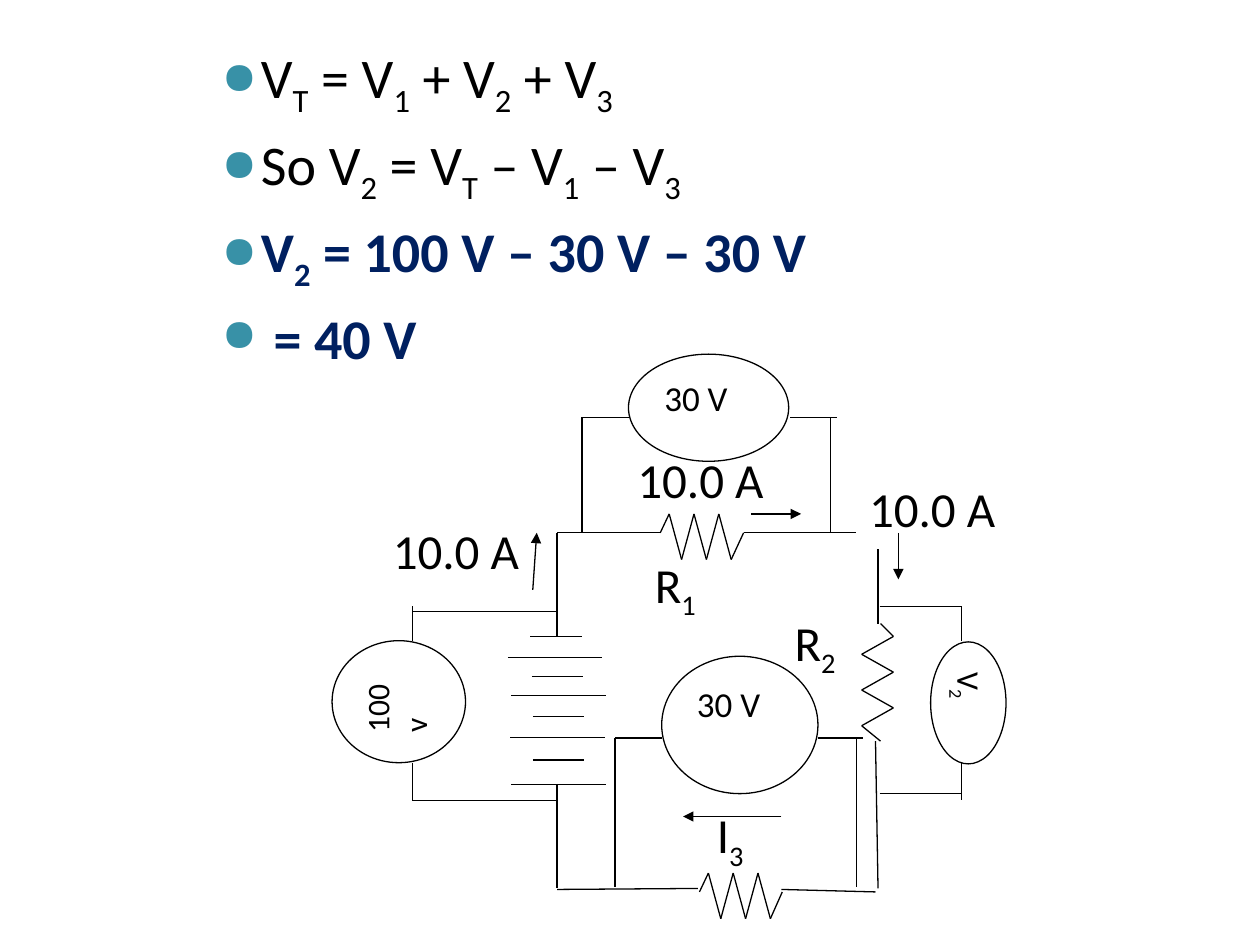
from dataclasses import dataclass

from lxml import etree
from pptx import Presentation
from pptx import util as u
from pptx.dml.color import RGBColor
from pptx.enum import shapes, text
from pptx.oxml.ns import qn

COLOURS = {"ink": "000000", "paper": "FFFFFF", "result": "002060", "bullet": "3891A7"}
FONT = "Calibri"
Point = tuple[float, float]


@dataclass
class Box:
    """A label or meter; lengths in cm, text sizes in points."""
    caption: str
    left: float
    top: float
    width: float
    height: float = 1.52
    size: int = 28
    edge: str = "paper"
    rotation: int = 0
    kind: shapes.MSO_SHAPE = shapes.MSO_SHAPE.RECTANGLE


def rgb(name: str) -> RGBColor:
    return RGBColor.from_string(COLOURS[name])


def write(paragraph, caption: str, size: int, colour: str = "ink", bold: bool = False) -> None:
    """Add runs; the character after each underscore is a subscript."""
    head, *tails = caption.split("_")
    pieces = [(head, False)]
    for tail in tails:
        pieces += [(tail[0], True), (tail[1:], False)]
    for piece, lowered in pieces:
        if not piece:
            continue
        run = paragraph.add_run()
        run.text = piece
        for key, value in {"name": FONT, "size": u.Pt(size), "bold": bold}.items():
            setattr(run.font, key, value)
        run.font.color.rgb = rgb(colour)
        if lowered:
            run.font._element.set("baseline", "-25000")


def draw_box(slide, box: Box) -> None:
    shape = slide.shapes.add_shape(
        box.kind, *(u.Cm(v) for v in (box.left, box.top, box.width, box.height)))
    shape.shadow.inherit = False
    shape.rotation = box.rotation
    shape.fill.solid()
    shape.fill.fore_color.rgb = rgb("paper")
    shape.line.color.rgb = rgb(box.edge)
    shape.line.width = u.Pt(0.75)
    frame = shape.text_frame
    frame.word_wrap = True
    frame.vertical_anchor = text.MSO_ANCHOR.TOP
    frame.paragraphs[0].alignment = text.PP_ALIGN.LEFT
    write(frame.paragraphs[0], box.caption, box.size)


def draw_wire(slide, points: list[Point], arrow: bool = False) -> None:
    """Join successive points with straight connectors."""
    for start, end in zip(points, points[1:]):
        wire = slide.shapes.add_connector(
            shapes.MSO_CONNECTOR.STRAIGHT, *(u.Cm(v) for v in start + end))
        wire.line.color.rgb = rgb("ink")
        wire.line.width = u.Pt(0.75)
        if arrow:
            etree.SubElement(wire.line._get_or_add_ln(), qn("a:tailEnd"), type="triangle")
        etree.SubElement(wire._element.spPr, qn("a:effectLst"))


def zigzag(start: float, first: float, step: float, end: float,
           axis: float, tips: Point) -> list[Point]:
    """Resistor along x: six alternating tips between two ends on the axis."""
    peaks = [(first + step * i, tips[i % 2]) for i in range(6)]
    return [(start, axis), *peaks, (end, axis)]


def draw_equations(slide) -> None:
    box = slide.shapes.add_textbox(*(u.Cm(v) for v in (3.99, 0.74, 20.83, 16.64)))
    frame = box.text_frame
    frame.word_wrap = True
    for i, (equation, is_result) in enumerate(EQUATIONS):
        paragraph = frame.paragraphs[0] if i == 0 else frame.add_paragraph()
        paragraph.space_before = u.Pt(6)
        write(paragraph, equation, 32, "result" if is_result else "ink", is_result)
        props = paragraph._p.get_or_add_pPr()
        props.set("marL", str(u.Cm(1.02)))
        props.set("indent", str(u.Cm(-0.79)))
        colour = etree.SubElement(props, qn("a:buClr"))
        etree.SubElement(colour, qn("a:srgbClr"), val=COLOURS["bullet"])
        etree.SubElement(props, qn("a:buSzPct"), val="80000")
        etree.SubElement(props, qn("a:buChar"), char="●")


EQUATIONS = [
    ("V_T = V_1 + V_2 + V_3", False),
    ("So V_2 = V_T – V_1 – V_3", False),
    ("V_2 = 100 V – 30 V – 30 V", True),
    (" = 40 V", True),
]
BACK_LABELS = [
    Box("R_2", 15.77, 12.22, 2.34),
    Box("R_1", 12.95, 11.05, 2.34),
    Box("I_3", 14.2, 16.1, 2.34),
    Box("10.0 A", 12.6, 8.94, 3.53),
]
FRONT_LABELS = [Box("10.0 A", 7.67, 10.36, 3.53), Box("10.0 A", 17.27, 9.53, 3.53)]
OVAL = {"edge": "ink", "kind": shapes.MSO_SHAPE.OVAL}
METERS = [
    Box("30 V", 12.67, 7.14, 3.23, 2.16, 20, **OVAL),
    Box("V_2", 18.29, 13.41, 2.46, 1.52, 18, rotation=90, **OVAL),
    Box("30 V", 13.34, 13.23, 3.15, 2.77, 20, **OVAL),
    Box("100v", 6.81, 12.8, 2.46, 2.69, 18, rotation=270, **OVAL),
]
RESISTORS = [
    zigzag(13.31, 13.49, 0.25, 14.99, 10.74, (10.36, 11.28)),
    [(x, y) for y, x in zigzag(12.57, 12.83, 0.36, 14.94, 17.75, (18.01, 17.37))],
    zigzag(14.1, 14.28, 0.25, 15.77, 17.98, (17.6, 18.52)),
]
WIRES = [
    # Main loop
    [(11.23, 10.74), (13.31, 10.74)],
    [(14.99, 10.74), (17.65, 10.74)],
    [(17.7, 10.74), (17.7, 12.57)],
    [(17.65, 14.94), (17.7, 17.91)],
    [(17.65, 17.98), (15.75, 17.93)],
    [(14.07, 17.91), (11.23, 17.93)],
    [(11.23, 10.74), (11.23, 12.83)],
    [(11.23, 15.8), (11.23, 17.91)],
    # Leads of the meter over R1
    [(11.73, 10.74), (11.73, 8.41), (12.67, 8.41)],
    [(16.74, 10.74), (16.74, 8.41)],
    [(15.93, 8.41), (16.87, 8.41)],
    # Leads of the meter over R2
    [(17.73, 12.22), (19.38, 12.22), (19.38, 12.93)],
    [(17.73, 16), (19.38, 16)],
    [(19.38, 15.39), (19.38, 16.13)],
    # Leads of the meter over the bottom resistor
    [(12.4, 17.88), (12.4, 14.88), (13.34, 14.88)],
    [(17.27, 17.88), (17.27, 14.88)],
    [(16.48, 14.88), (17.4, 14.88)],
    # Leads of the battery meter
    [(11.2, 16.13), (8.31, 16.13), (8.31, 15.39)],
    [(11.2, 12.32), (8.31, 12.32)],
    [(8.31, 12.93), (8.31, 12.22)],
]
# Battery plates: left ends and heights, by plate width
PLATES = {
    1.04: [(10.69, 12.83), (10.72, 13.64), (10.74, 14.45), (10.74, 15.32)],
    1.9: [(10.24, 13.26), (10.31, 14.02), (10.29, 14.86), (10.31, 15.82)],
}
CURRENTS = [
    [(10.74, 11.89), (10.82, 10.74)],
    [(15.14, 10.36), (16.15, 10.36)],
    [(18.11, 10.74), (18.11, 11.68)],
    [(15.75, 16.46), (13.77, 16.46)],
]


def main() -> None:
    deck = Presentation()
    deck.slide_width, deck.slide_height = u.Cm(25.4), u.Cm(19.05)
    slide = deck.slides.add_slide(deck.slide_layouts[6])
    draw_equations(slide)

    # Circuit, from back to front
    for label in BACK_LABELS:
        draw_box(slide, label)
    for points in WIRES + RESISTORS:
        draw_wire(slide, points)
    for width, plates in PLATES.items():
        for left, height in plates:
            draw_wire(slide, [(left, height), (left + width, height)])
    for box in METERS + FRONT_LABELS:
        draw_box(slide, box)
    for points in CURRENTS:
        draw_wire(slide, points, arrow=True)
    deck.save("out.pptx")


if __name__ == "__main__":
    main()
